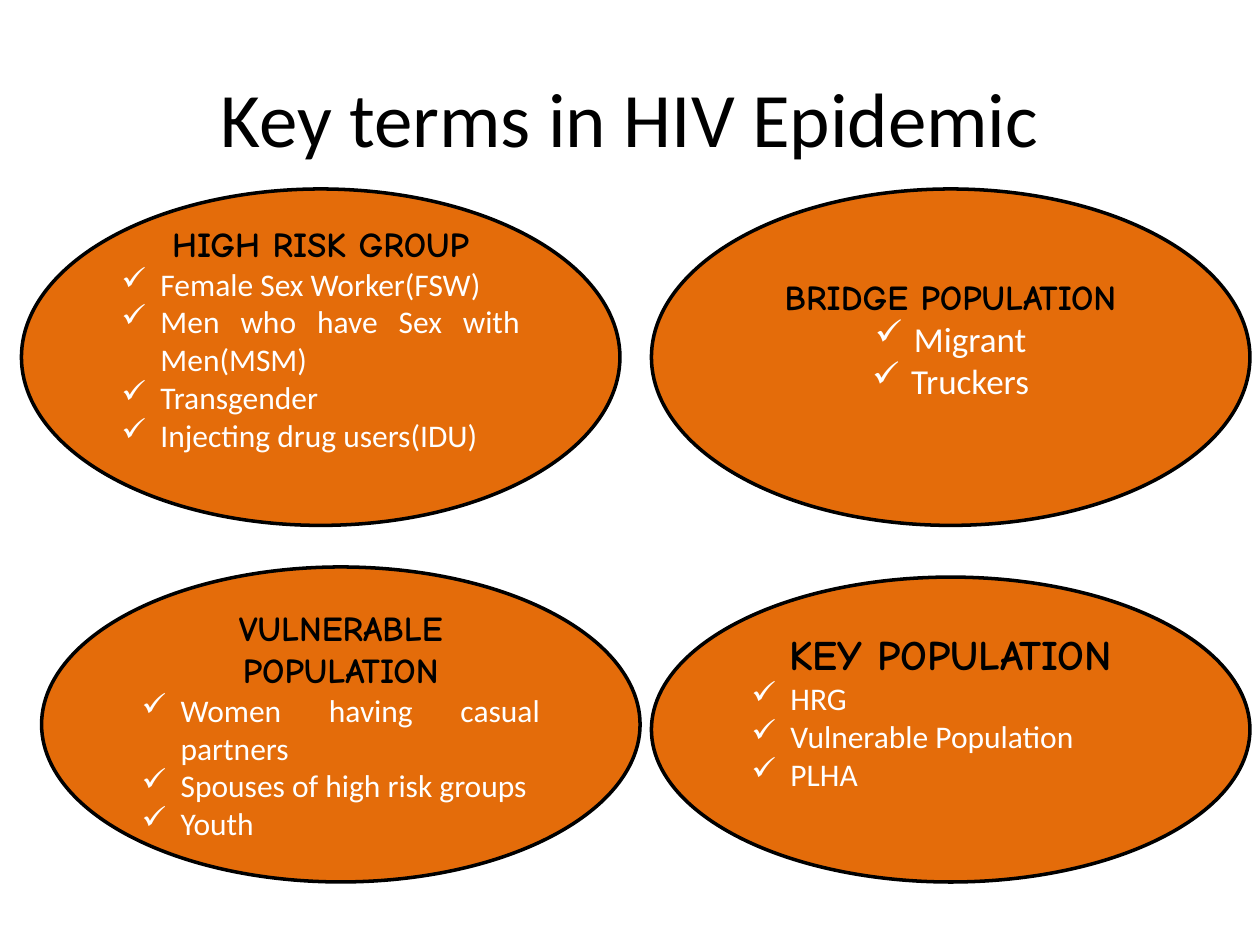
"""Build the slide on key terms in the HIV epidemic."""
from dataclasses import dataclass

import pptx
import pptx.dml.color
import pptx.enum.shapes
import pptx.enum.text
import pptx.oxml.ns
import pptx.presentation
import pptx.slide
import pptx.text.text
import pptx.util
from lxml import etree

Inches = pptx.util.Inches
Pt = pptx.util.Pt
Align = pptx.enum.text.PP_ALIGN
RGBColor = pptx.dml.color.RGBColor

BLACK = RGBColor(0x00, 0x00, 0x00)
WHITE = RGBColor(0xFF, 0xFF, 0xFF)
ORANGE = RGBColor(0xE4, 0x6C, 0x0A)

LEFT_RIGHT_COLUMN = 5.17
GROUP_WIDTH = 4.75
HANGING = Inches(0.31)


@dataclass(frozen=True)
class Group:
    """A population group and its oval, in inches and points."""

    heading: tuple[str, ...]
    members: tuple[str, ...]
    left: float
    top: float
    height: float
    heading_size: int = 20
    member_size: int = 18
    member_align: Align = Align.JUSTIFY
    bottom_inset: float = 0.35


GROUPS = (
    Group(
        ("HIGH RISK GROUP",),
        (
            "Female Sex Worker(FSW)",
            "Men who have Sex with Men(MSM)",
            "Transgender",
            "Injecting drug users(IDU)",
        ),
        0.17, 1.5, 2.67,
    ),
    Group(
        ("VULNERABLE", "POPULATION"),
        ("Women having casual partners", "Spouses of high risk groups", "Youth"),
        0.33, 4.5, 2.5, bottom_inset=0.05,
    ),
    Group(
        ("BRIDGE POPULATION",),
        ("Migrant", "Truckers"),
        LEFT_RIGHT_COLUMN, 1.5, 2.67, member_size=20, member_align=Align.CENTER,
    ),
    Group(
        ("KEY POPULATION",),
        ("HRG", "Vulnerable Population", "PLHA"),
        LEFT_RIGHT_COLUMN, 4.58, 2.42, heading_size=24,
    ),
)


def add_run(
    paragraph: pptx.text.text._Paragraph,
    text: str,
    size: int,
    face: str,
    color: RGBColor,
    bold: bool = False,
) -> None:
    """Add one formatted run."""
    run = paragraph.add_run()
    run.text = text
    run.font.size = Pt(size)
    run.font.name = face
    run.font.bold = bold
    run.font.color.rgb = color


def add_tick(paragraph: pptx.text.text._Paragraph) -> None:
    """Give a paragraph a hanging tick bullet."""
    properties = paragraph._p.get_or_add_pPr()
    properties.set("marL", str(HANGING))
    properties.set("indent", str(-HANGING))
    bullet = etree.SubElement(properties, pptx.oxml.ns.qn("a:buChar"))
    bullet.set("char", "✓")


def add_group(slide: pptx.slide.Slide, group: Group) -> None:
    """Draw the oval of one group with its heading and members."""
    oval = slide.shapes.add_shape(
        pptx.enum.shapes.MSO_SHAPE.OVAL,
        Inches(group.left), Inches(group.top),
        Inches(GROUP_WIDTH), Inches(group.height),
    )
    oval.shadow.inherit = False
    oval.fill.solid()
    oval.fill.fore_color.rgb = ORANGE
    oval.line.color.rgb = BLACK
    oval.line.width = Pt(2)

    frame = oval.text_frame
    frame.word_wrap = True
    frame.vertical_anchor = pptx.enum.text.MSO_ANCHOR.MIDDLE
    frame.margin_bottom = Inches(group.bottom_inset)
    for index, line in enumerate(group.heading):
        paragraph = frame.add_paragraph() if index else frame.paragraphs[0]
        paragraph.alignment = Align.CENTER
        add_run(paragraph, line, group.heading_size, "Comic Neue", BLACK, True)
    for member in group.members:
        paragraph = frame.add_paragraph()
        paragraph.alignment = group.member_align
        add_tick(paragraph)
        add_run(paragraph, member, group.member_size, "Calibri", WHITE)


def main() -> None:
    """Build and save the slide."""
    deck = pptx.Presentation()
    deck.slide_width, deck.slide_height = Inches(10), Inches(7.5)
    slide = deck.slides.add_slide(deck.slide_layouts[5])

    title = slide.shapes.title
    title.left, title.top = Inches(0.5), Inches(0.3)
    title.width, title.height = Inches(9), Inches(1.25)
    title.text_frame.vertical_anchor = pptx.enum.text.MSO_ANCHOR.MIDDLE
    heading = title.text_frame.paragraphs[0]
    heading.alignment = Align.CENTER
    add_run(heading, "Key terms in HIV Epidemic", 44, "Calibri", BLACK)

    for group in GROUPS:
        add_group(slide, group)
    deck.save("out.pptx")


if __name__ == "__main__":
    main()
